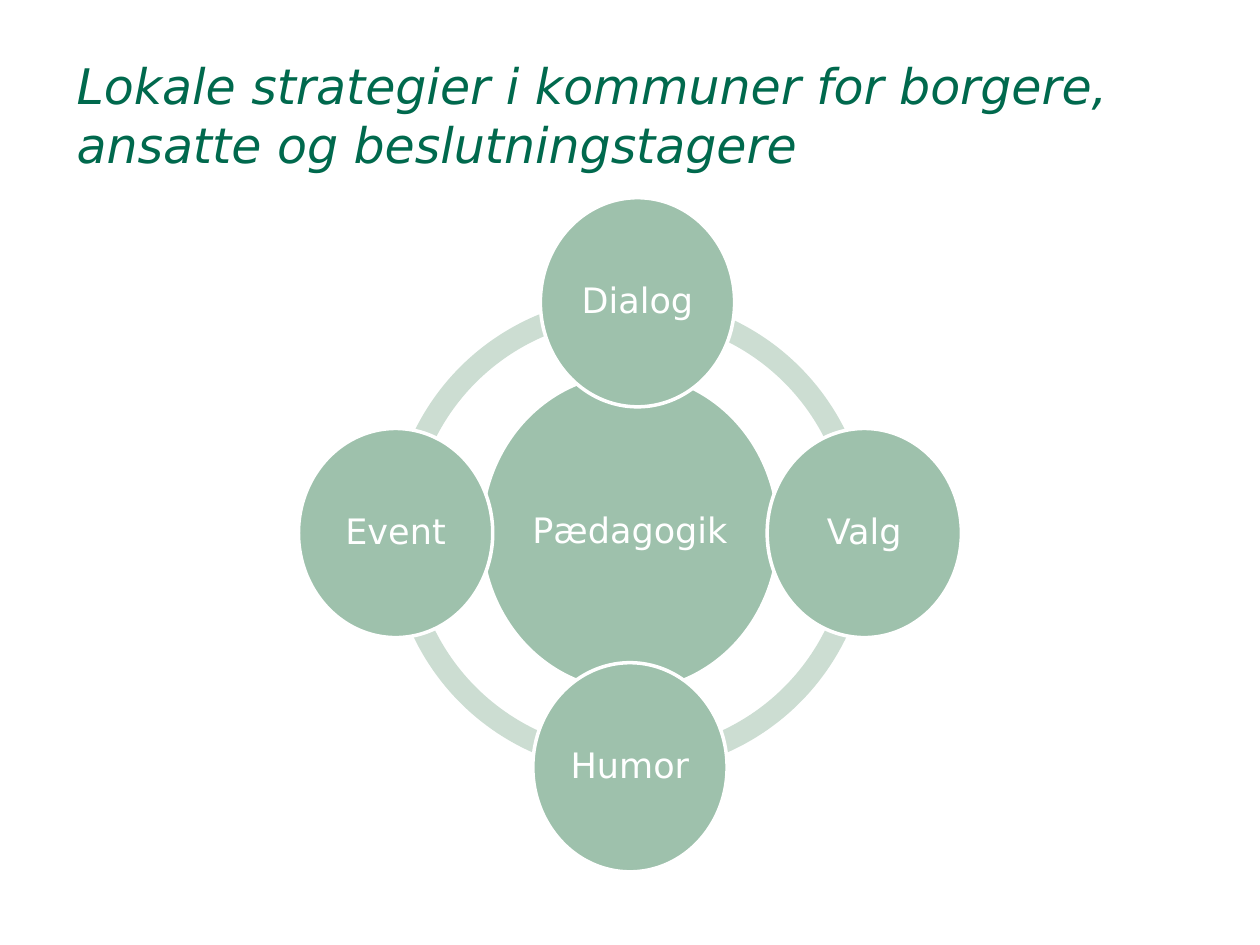
from pptx import Presentation
from pptx.dml.color import RGBColor
from pptx.enum import shapes, text
from pptx.util import Pt

FONT = "DejaVu Sans"
GREEN = RGBColor(0x00, 0x69, 0x4D)
SAGE = RGBColor(0x9E, 0xC1, 0xAC)
PALE = RGBColor(0xCC, 0xDD, 0xD2)
WHITE = RGBColor(0xFF, 0xFF, 0xFF)


def write(tf, words, size, color, italic=False, align=text.PP_ALIGN.LEFT, spacing=1.0):
    """Put one formatted paragraph in a vertically centred text frame."""
    tf.word_wrap = True
    tf.vertical_anchor = text.MSO_ANCHOR.MIDDLE
    p = tf.paragraphs[0]
    p.alignment = align
    p.line_spacing = spacing
    r = p.add_run()
    r.text = words
    r.font.name = FONT
    r.font.size = Pt(size)
    r.font.italic = italic
    r.font.color.rgb = color


def add_title(slide, x, y, w, h):
    """Place the slide title in the given box."""
    sp = slide.shapes.add_textbox(Pt(x), Pt(y), Pt(w), Pt(h))
    write(sp.text_frame, "Lokale strategier i kommuner for borgere, ansatte og beslutningstagere",
          28, GREEN, italic=True)


def add_arc(group, x, y, size, start, end):
    """Draw one arc of the ring, clockwise between two angles in degrees."""
    sp = group.shapes.add_shape(shapes.MSO_SHAPE.BLOCK_ARC, Pt(x), Pt(y), Pt(size), Pt(size))
    sp.shadow.inherit = False
    sp.fill.solid()
    sp.fill.fore_color.rgb = PALE
    sp.line.fill.background()
    for i, value in enumerate((start * 0.6, end * 0.6, 0.046)):
        sp.adjustments[i] = value


def add_node(group, cx, cy, w, h, label):
    """Draw a labelled ellipse around a centre point."""
    sp = group.shapes.add_shape(shapes.MSO_SHAPE.OVAL, Pt(cx - w / 2), Pt(cy - h / 2), Pt(w), Pt(h))
    sp.shadow.inherit = False
    sp.fill.solid()
    sp.fill.fore_color.rgb = SAGE
    sp.line.color.rgb = WHITE
    sp.line.width = Pt(2)
    tf = sp.text_frame
    tf.margin_left = tf.margin_right = tf.margin_top = tf.margin_bottom = Pt(2)
    write(tf, label, 20, WHITE, align=text.PP_ALIGN.CENTER, spacing=0.9)


def add_cycle(slide, x, y, w, h):
    """Draw the hub, its ring and four satellites in the given box."""
    group = slide.shapes.add_group_shape()
    ring, node_w, node_h = 274.3, 111, 119.5
    cx, cy = x + w / 2, y + h / 2 - 1
    left, top = cx - ring / 2, cy - ring / 2
    for start, end, drop in ((180.9, 271.9, 2), (90, 180, 0), (0, 90, 0), (271.9, 359.1, 2)):
        add_arc(group, left, top + drop, ring, start, end)
    add_node(group, cx, cy - 0.5, 170, 181.4, "Pædagogik")
    for label, nx, ny in (
        ("Dialog", cx + 4.3, y + node_h / 2),
        ("Valg", x + w - node_w / 2, cy),
        ("Humor", cx, y + h - node_h / 2),
        ("Event", x + node_w / 2, cy),
    ):
        add_node(group, nx, ny, node_w, node_h, label)


def main():
    """Build and save the slide."""
    prs = Presentation()
    prs.slide_width, prs.slide_height = Pt(720), Pt(540)
    slide = prs.slides.add_slide(prs.slide_layouts[6])
    add_title(slide, 36.7, 20.2, 648, 90)
    add_cycle(slide, 170.6, 113, 378.8, 385.2)
    prs.save("out.pptx")


if __name__ == "__main__":
    main()
